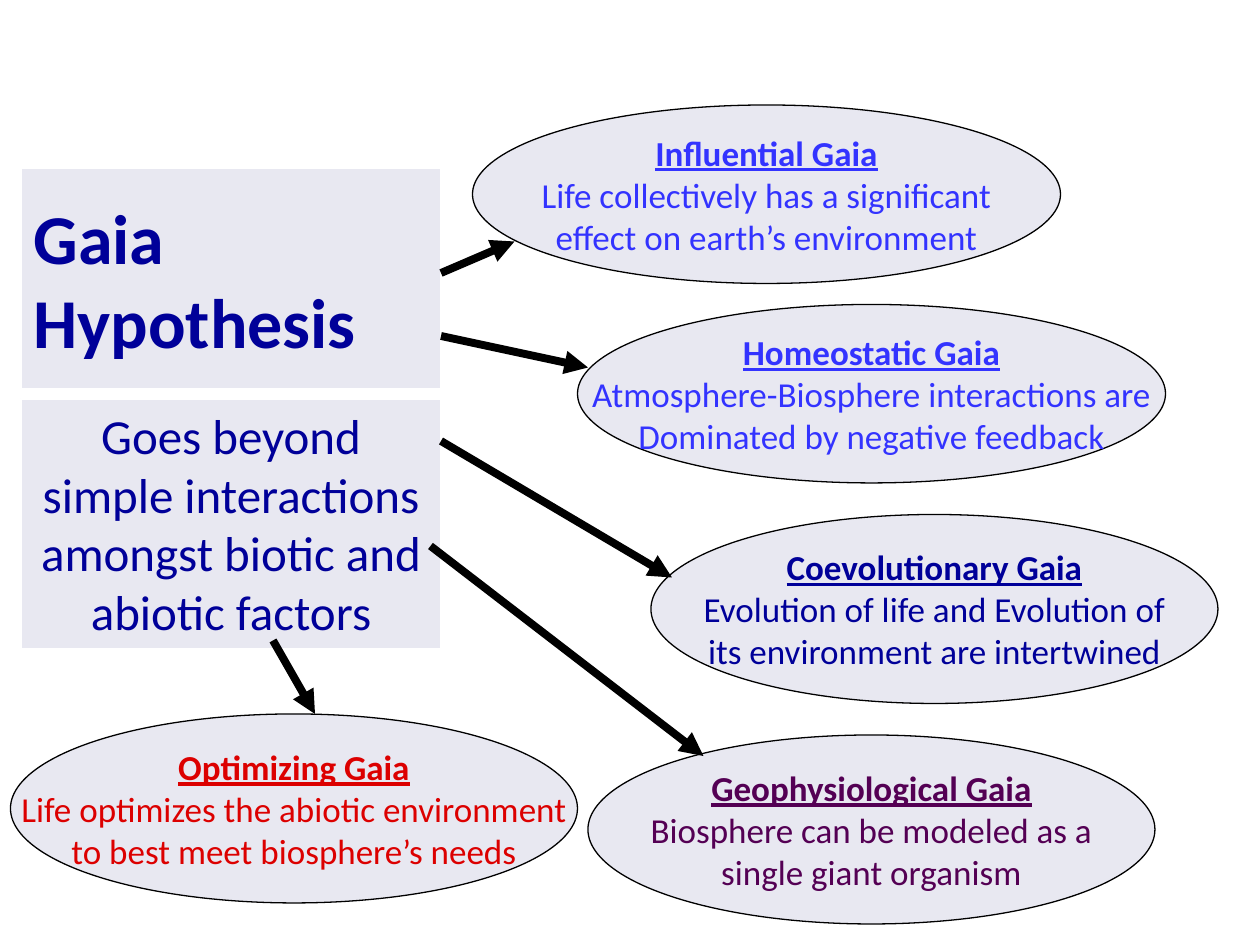
from typing import NamedTuple

from lxml.etree import SubElement
from pptx import Presentation
from pptx.dml.color import RGBColor
from pptx.enum.shapes import MSO_CONNECTOR, MSO_SHAPE
from pptx.enum.text import MSO_ANCHOR, MSO_AUTO_SIZE, PP_ALIGN
from pptx.oxml.ns import qn
from pptx.util import Inches, Pt

CELL = Inches(1) / 12  # the slide is a grid of 120 columns by 90 rows
FONT = "Calibri"
COLORS = {
    "panel": "E8E8F1",
    "white": "FFFFFF",
    "black": "000000",
    "navy": "000099",
    "blue": "3333FF",
    "red": "DC0000",
    "purple": "540054",
}


class Box(NamedTuple):
    column: float
    row: float
    columns: float
    rows: float


class Hypothesis(NamedTuple):
    box: Box
    color: str
    name: str
    lines: tuple[str, str]


class Arrow(NamedTuple):
    start: tuple[int, int]
    end: tuple[int, int]


TITLE_BOX = Box(2, 16, 40, 21)
SUMMARY_BOX = Box(2, 38, 40, 23.75)
SUMMARY = "Goes beyond simple interactions amongst biotic and abiotic factors"

HYPOTHESES = [
    Hypothesis(Box(45, 10, 56, 17), "blue", "Influential Gaia",
               ("Life collectively has a significant", "effect on earth’s environment")),
    Hypothesis(Box(55, 29, 56, 17), "blue", "Homeostatic Gaia",
               ("Atmosphere-Biosphere interactions are", "Dominated by negative feedback")),
    Hypothesis(Box(62, 49, 54, 18), "navy", "Coevolutionary Gaia",
               ("Evolution of life and Evolution of", "its environment are intertwined")),
    Hypothesis(Box(56, 70, 54, 18), "purple", "Geophysiological Gaia",
               ("Biosphere can be modeled as a", "single giant organism")),
    Hypothesis(Box(1, 68, 54, 18), "red", "Optimizing Gaia",
               ("Life optimizes the abiotic environment", "to best meet biosphere’s needs")),
]

ARROWS = [
    Arrow((42, 26), (49, 23)),
    Arrow((42, 32), (56, 35)),
    Arrow((42, 42), (64, 55)),
    Arrow((41, 52), (67, 72)),
    Arrow((26, 61), (30, 68)),
]


def grid(*cells: float) -> list[int]:
    return [round(cell * CELL) for cell in cells]


def rgb(color: str) -> RGBColor:
    return RGBColor.from_string(COLORS[color])


def style_panel(shape, outline: str) -> None:
    shape.fill.solid()
    shape.fill.fore_color.rgb = rgb("panel")
    shape.line.color.rgb = rgb(outline)
    shape.line.width = Pt(0.75)


def style_paragraph(paragraph, size: int, color: str, alignment=PP_ALIGN.CENTER,
                    bold: bool = False, underline: bool = False) -> None:
    paragraph.alignment = alignment
    font = paragraph.font
    font.name, font.size, font.bold, font.underline = FONT, Pt(size), bold, underline
    font.color.rgb = rgb(color)


def place_title(slide) -> None:
    title = slide.shapes.title
    title.left, title.top, title.width, title.height = grid(*TITLE_BOX)
    style_panel(title, "white")
    frame = title.text_frame
    frame.text = "Gaia Hypothesis"
    frame.auto_size = MSO_AUTO_SIZE.NONE
    frame.vertical_anchor = MSO_ANCHOR.MIDDLE
    style_paragraph(frame.paragraphs[0], 40, "navy", PP_ALIGN.LEFT, bold=True)


def add_summary(slide) -> None:
    summary = slide.shapes.add_textbox(*grid(*SUMMARY_BOX))
    style_panel(summary, "white")
    frame = summary.text_frame
    frame.text = SUMMARY
    frame.word_wrap = True
    frame.auto_size = MSO_AUTO_SIZE.SHAPE_TO_FIT_TEXT
    style_paragraph(frame.paragraphs[0], 28, "navy")


def add_hypothesis(slide, hypothesis: Hypothesis) -> None:
    ellipse = slide.shapes.add_shape(MSO_SHAPE.OVAL, *grid(*hypothesis.box))
    ellipse.shadow.inherit = False
    style_panel(ellipse, "black")
    frame = ellipse.text_frame
    frame.text = "\n".join((hypothesis.name, *hypothesis.lines))
    frame.word_wrap = False
    frame.vertical_anchor = MSO_ANCHOR.MIDDLE
    for index, paragraph in enumerate(frame.paragraphs):
        heading = index == 0
        style_paragraph(paragraph, 20, hypothesis.color, bold=heading, underline=heading)


def add_arrow(slide, arrow: Arrow) -> None:
    connector = slide.shapes.add_connector(
        MSO_CONNECTOR.STRAIGHT, *grid(*arrow.start, *arrow.end))
    connector.line.color.rgb = rgb("black")
    connector.line.width = Pt(4.5)
    properties = connector._element.spPr
    SubElement(properties.find(qn("a:ln")), qn("a:tailEnd"), type="triangle")
    SubElement(properties, qn("a:effectLst"))


def main() -> None:
    presentation = Presentation()
    presentation.slide_width, presentation.slide_height = grid(120, 90)
    title_only = presentation.slide_layouts.get_by_name("Title Only")
    slide = presentation.slides.add_slide(title_only)
    place_title(slide)
    add_summary(slide)
    for hypothesis in HYPOTHESES:
        add_hypothesis(slide, hypothesis)
    for arrow in ARROWS:
        add_arrow(slide, arrow)
    presentation.save("out.pptx")


if __name__ == "__main__":
    main()
